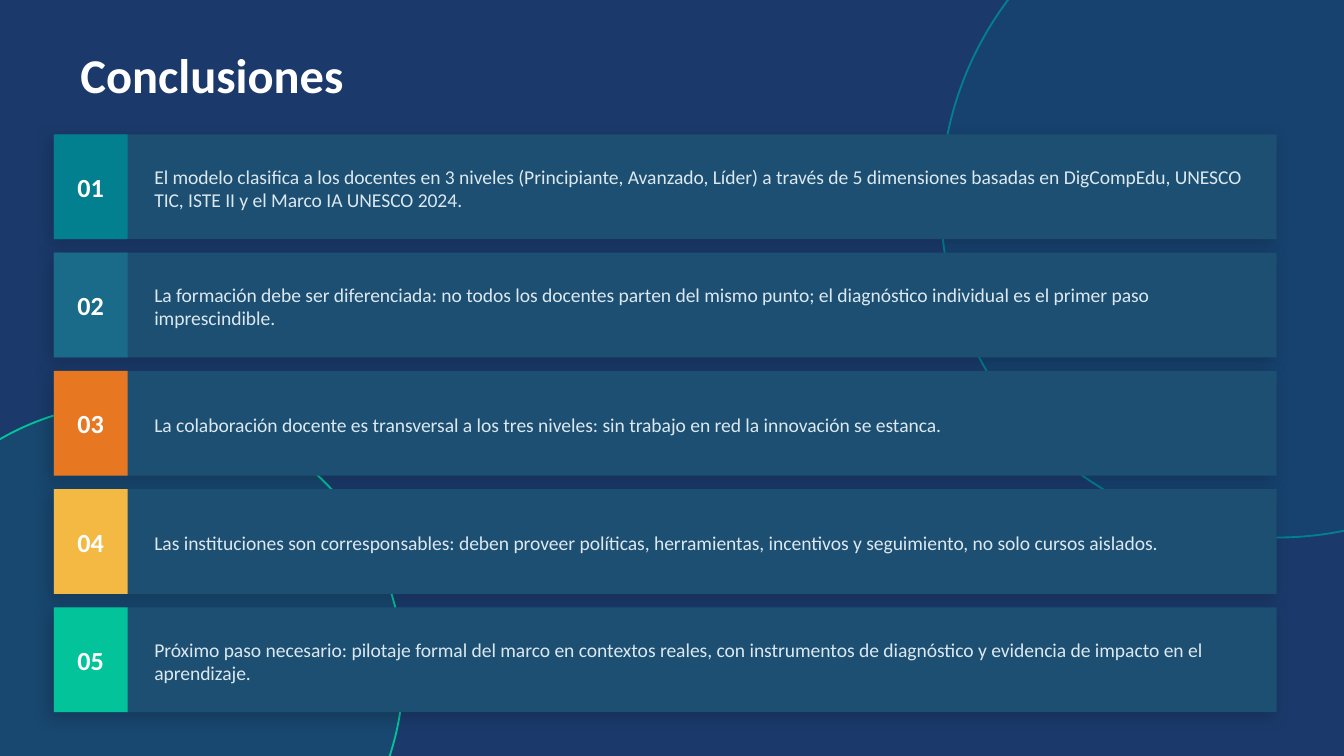
"""Build the "Conclusiones" slide: five numbered findings on a dark ground."""
from dataclasses import dataclass

from lxml import etree
from pptx import Presentation
from pptx import util as u
from pptx.dml.color import RGBColor
from pptx.enum import shapes, text
from pptx.oxml.ns import qn

TITLE = "Conclusiones"
ITEMS = [
    ("028090", "El modelo clasifica a los docentes en 3 niveles (Principiante, Avanzado, Líder) "
               "a través de 5 dimensiones basadas en DigCompEdu, UNESCO TIC, ISTE II "
               "y el Marco IA UNESCO 2024."),
    ("1A6B8A", "La formación debe ser diferenciada: no todos los docentes parten del mismo punto; "
               "el diagnóstico individual es el primer paso imprescindible."),
    ("E87722", "La colaboración docente es transversal a los tres niveles: "
               "sin trabajo en red la innovación se estanca."),
    ("F4B942", "Las instituciones son corresponsables: deben proveer políticas, herramientas, "
               "incentivos y seguimiento, no solo cursos aislados."),
    ("02C39A", "Próximo paso necesario: pilotaje formal del marco en contextos reales, "
               "con instrumentos de diagnóstico y evidencia de impacto en el aprendizaje."),
]
RINGS = [((1400, -200, 1000, 1000), "028090", 12), ((-200, 600, 800, 800), "02C39A", 10)]

PX = 4572
WIDE, HIGH = 2000, 1125
LEFT, TOP, ROW_W, ROW_H, GAP = 80, 200, 1820, 156, 20
TAG_W = 110


@dataclass(frozen=True)
class Theme:
    """Colours, font and type sizes."""
    back: str = "1B3A6B"
    card: str = "1C4F72"
    white: str = "FFFFFF"
    body: str = "DCE8F0"
    font: str = "Calibri"
    title_pt: float = 26
    tag_pt: float = 14
    body_pt: float = 10.5


THEME = Theme()


def scale(box):
    """Turn a px box into EMU."""
    return [u.Emu(n * PX) for n in box]


def tint(node, alpha):
    """Set the opacity percentage of a colour element."""
    etree.SubElement(node, qn("a:alpha")).set("val", str(alpha * 1000))


def add_form(slide, kind, box, fill):
    """Add a flat filled shape without an outline."""
    form = slide.shapes.add_shape(kind, *scale(box))
    form.shadow.inherit = False
    form.fill.solid()
    form.fill.fore_color.rgb = RGBColor.from_string(fill)
    form.line.fill.background()
    return form


def add_ring(slide, box, hue, alpha):
    """Add a faint disc with a thin solid outline."""
    ring = add_form(slide, shapes.MSO_SHAPE.OVAL, box, hue)
    tint(ring.fill._xPr.find(qn("a:solidFill"))[0], alpha)
    ring.line.color.rgb = RGBColor.from_string(hue)
    ring.line.width = u.Pt(1)


def add_shade(form):
    """Give a shape a soft black outer shadow."""
    effects = form._element.spPr.find(qn("a:effectLst"))
    shade = etree.SubElement(effects, qn("a:outerShdw"))
    for key, val in (("blurRad", u.Pt(8)), ("dist", u.Pt(3)), ("dir", 135 * 60000)):
        shade.set(key, str(int(val)))
    shade.set("algn", "bl")
    shade.set("rotWithShape", "0")
    hue = etree.SubElement(shade, qn("a:srgbClr"))
    hue.set("val", "000000")
    tint(hue, 18)


def add_text(slide, box, words, size, hue, bold=False, tight=False):
    """Add a vertically centred text box; tight ones are centred with no insets."""
    frame = slide.shapes.add_textbox(*scale(box)).text_frame
    frame.word_wrap = True
    frame.vertical_anchor = text.MSO_ANCHOR.MIDDLE
    para = frame.paragraphs[0]
    if tight:
        frame.margin_left = frame.margin_right = frame.margin_top = frame.margin_bottom = 0
        para.alignment = text.PP_ALIGN.CENTER
    run = para.add_run()
    run.text = words
    run.font.name, run.font.size, run.font.bold = THEME.font, u.Pt(size), bold
    run.font.color.rgb = RGBColor.from_string(hue)


def add_row(slide, rank, hue, words):
    """Add one card with its number tag and sentence."""
    top = TOP + rank * (ROW_H + GAP)
    rect = shapes.MSO_SHAPE.RECTANGLE
    tag = (LEFT, top, TAG_W, ROW_H)
    add_shade(add_form(slide, rect, (LEFT, top, ROW_W, ROW_H), THEME.card))
    add_form(slide, rect, tag, hue)
    add_text(slide, tag, f"{rank + 1:02}", THEME.tag_pt, THEME.white, bold=True, tight=True)
    add_text(slide, (LEFT + TAG_W + 20, top + 20, 1660, 120), words, THEME.body_pt, THEME.body)


def main():
    """Compose and save the slide."""
    deck = Presentation()
    deck.slide_width, deck.slide_height = scale((WIDE, HIGH))
    slide = deck.slides.add_slide(deck.slide_layouts[6])
    slide.background.fill.solid()
    slide.background.fill.fore_color.rgb = RGBColor.from_string(THEME.back)
    for ring in RINGS:
        add_ring(slide, *ring)
    add_text(slide, (100, 60, 1200, 100), TITLE, THEME.title_pt, THEME.white, bold=True)
    for rank, item in enumerate(ITEMS):
        add_row(slide, rank, *item)
    deck.save("out.pptx")


if __name__ == "__main__":
    main()
